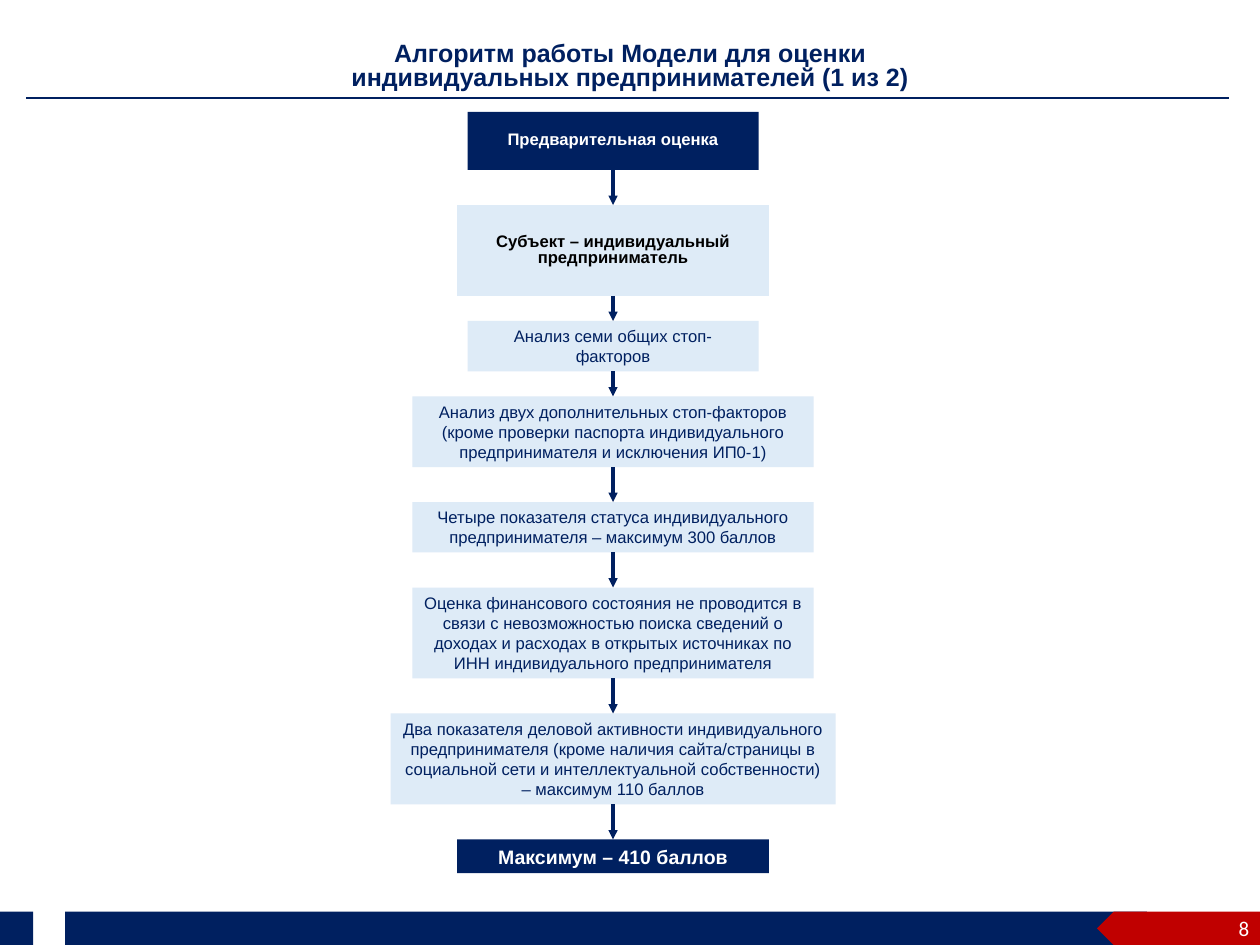
from lxml import etree
from pptx import Presentation
from pptx import util as u
from pptx.dml import color
from pptx.enum import shapes, text
from pptx.oxml import ns

NAVY, PALE, RED, WHITE, BLACK = "002060", "DEEBF7", "C00000", "FFFFFF", "000000"
WIDTH, HEIGHT = 907.2, 680.4
AXIS = 441.4


def rgb(value):
    return color.RGBColor.from_string(value)


class FlowSlide:
    font = "Arial"

    def __init__(self, slide):
        self.slide = slide

    def put_words(self, shape, words, size, ink, bold=False, tight=False,
                  align=text.PP_ALIGN.CENTER, anchor=text.MSO_ANCHOR.MIDDLE, font=None):
        frame = shape.text_frame
        frame.text = words
        frame.word_wrap = True
        frame.auto_size = text.MSO_AUTO_SIZE.NONE
        frame.vertical_anchor = anchor
        paragraph = frame.paragraphs[0]
        paragraph.alignment = align
        if tight:
            paragraph.line_spacing = 0.8
            paragraph.space_after = u.Pt(4)
        for run in paragraph.runs:
            run.font.name = font or self.font
            run.font.size = u.Pt(size)
            run.font.bold = bold
            run.font.color.rgb = rgb(ink)

    def title(self, words, left, top, width, height):
        heading = self.slide.shapes.title
        heading.left, heading.top = u.Pt(left), u.Pt(top)
        heading.width, heading.height = u.Pt(width), u.Pt(height)
        self.put_words(heading, words, 18, NAVY, bold=True, tight=True,
                       anchor=text.MSO_ANCHOR.TOP)

    def shape(self, kind, left, top, width, height, fill):
        part = self.slide.shapes.add_shape(
            kind, u.Pt(left), u.Pt(top), u.Pt(width), u.Pt(height))
        part.shadow.inherit = False
        part.fill.solid()
        part.fill.fore_color.rgb = rgb(fill)
        part.line.fill.background()
        return part

    def band(self, left, width, fill, point):
        part = self.shape(shapes.MSO_SHAPE.PENTAGON, left, HEIGHT - 24, width, 24, fill)
        part.rotation = 180
        part.adjustments[0] = point

    def step(self, top, width, height, words, fill, ink, size=12, bold=False, tight=False):
        box = self.shape(shapes.MSO_SHAPE.RECTANGLE, AXIS - width / 2, top,
                         width, height, fill)
        self.put_words(box, words, size, ink, bold, tight)
        return box

    def line(self, x1, y1, x2, y2, weight):
        rule = self.slide.shapes.add_connector(
            shapes.MSO_CONNECTOR.STRAIGHT, u.Pt(x1), u.Pt(y1), u.Pt(x2), u.Pt(y2))
        rule.line.color.rgb = rgb(NAVY)
        rule.line.width = u.Pt(weight)
        etree.SubElement(rule._element.spPr, ns.qn("a:effectLst"))
        return rule

    def arrow(self, upper, lower):
        link = self.line(AXIS, 0, AXIS, 0, 2.25)
        link.begin_connect(upper, 2)
        link.end_connect(lower, 0)
        stroke = link._element.spPr.find(ns.qn("a:ln"))
        etree.SubElement(stroke, ns.qn("a:tailEnd"), type="triangle")

    def page_number(self, number, left, top, width, height):
        label = self.slide.shapes.add_textbox(
            u.Pt(left), u.Pt(top), u.Pt(width), u.Pt(height))
        self.put_words(label, number, 15.1, WHITE, align=text.PP_ALIGN.RIGHT,
                       font="Calibri")


def main():
    deck = Presentation()
    deck.slide_width, deck.slide_height = u.Pt(WIDTH), u.Pt(HEIGHT)
    page = FlowSlide(deck.slides.add_slide(deck.slide_layouts[5]))

    page.title("Алгоритм работы Модели для оценки\v"
               "индивидуальных предпринимателей (1 из 2)", 0, 27.4, WIDTH, 42.5)
    page.line(18.9, 70.4, 884.9, 70.4, 1.75)

    page.band(46.8, 779, NAVY, 0)
    page.band(789.8, 117.4, RED, 0.5)
    page.band(0, 23.8, NAVY, 0)
    page.page_number("8", 702.7, 650.2, 203.8, 36)

    heading = dict(bold=True, tight=True)
    steps = [
        (25.2, 209.5, 41.8, "Предварительная оценка", NAVY, WHITE, heading),
        (18, 224.6, 65.5, "Субъект – индивидуальный предприниматель",
         PALE, BLACK, heading),
        (18, 209.5, 36.3, "Анализ семи общих стоп-факторов", PALE, NAVY, {}),
        (25.2, 289, 50.9, "Анализ двух дополнительных стоп-факторов (кроме проверки "
         "паспорта индивидуального предпринимателя и исключения ИП0-1)", PALE, NAVY, {}),
        (25.2, 289, 36.3, "Четыре показателя статуса индивидуального предпринимателя "
         "– максимум 300 баллов", PALE, NAVY, {}),
        (25.2, 289, 65.5, "Оценка финансового состояния не проводится в связи с "
         "невозможностью поиска сведений о доходах и расходах в открытых источниках "
         "по ИНН индивидуального предпринимателя", PALE, NAVY, {}),
        (25.2, 320.4, 65.5, "Два показателя деловой активности индивидуального "
         "предпринимателя (кроме наличия сайта/страницы в социальной сети и "
         "интеллектуальной собственности) – максимум 110 баллов", PALE, NAVY, {}),
        (0, 224.6, 24.3, "Максимум – 410 баллов", NAVY, WHITE,
         dict(size=14, bold=True)),
    ]
    top, boxes = 80.6, []
    for gap, width, height, words, fill, ink, style in steps:
        boxes.append(page.step(top, width, height, words, fill, ink, **style))
        top += height + gap
    for upper, lower in zip(boxes, boxes[1:]):
        page.arrow(upper, lower)

    deck.save("out.pptx")


if __name__ == "__main__":
    main()
